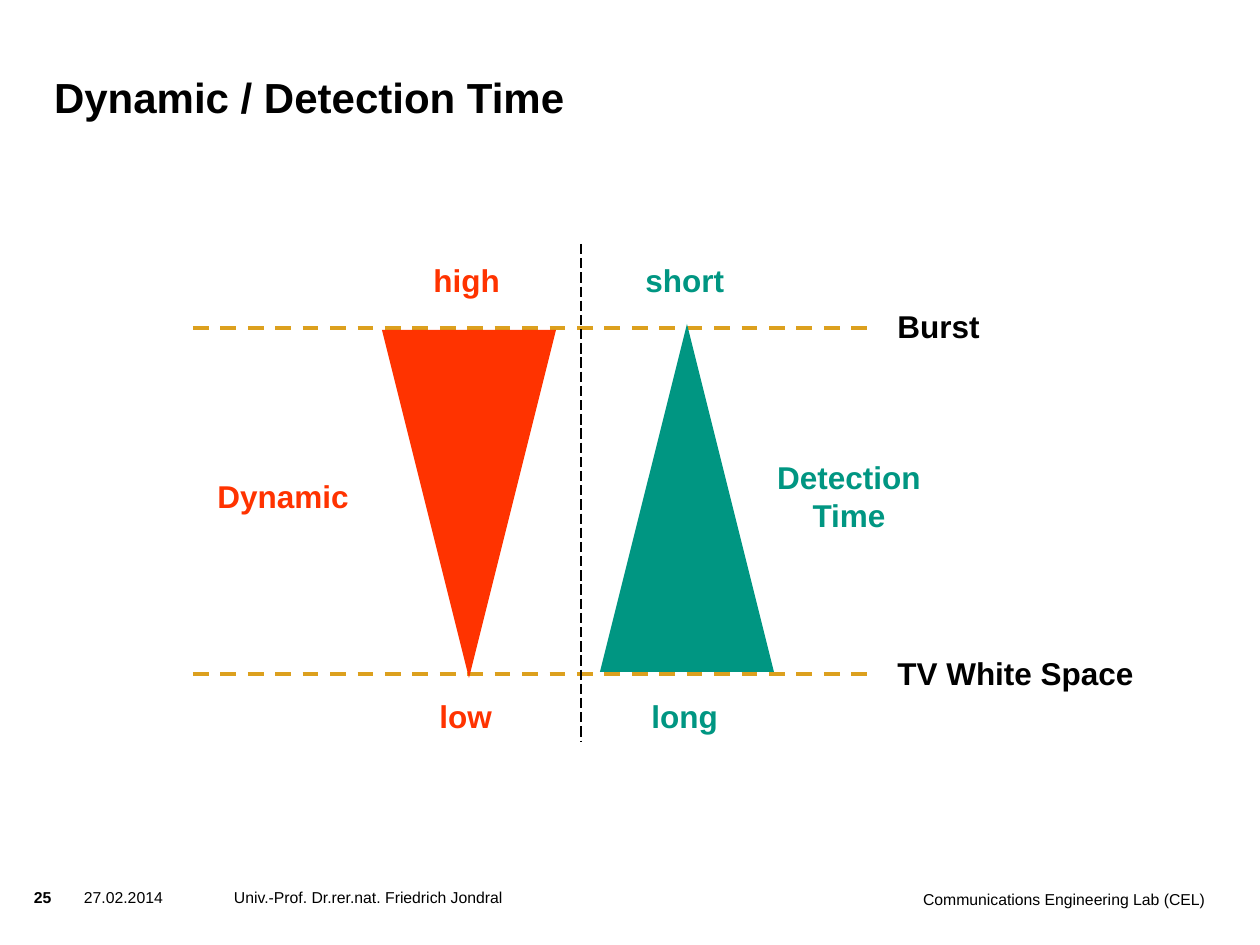
import pptx
import pptx.util
import pptx.dml.color
import pptx.enum.dml
import pptx.enum.shapes
import pptx.enum.text
import pptx.oxml.ns
import lxml.etree

PX = 914400 // 126
RED, GREEN, GOLD, BLACK = "FF3300", "009682", "DCA01E", "000000"
ALIGN = pptx.enum.text.PP_ALIGN
DASH = pptx.enum.dml.MSO_LINE

TITLE = ("Dynamic / Detection Time", (54, 45, 953, 77))
LABELS = [
    ("Dynamic", (205, 471, 156, 50), RED),
    ("Detection\nTime", (764, 452, 170, 89), GREEN),
    ("Burst", (885, 301, 107, 50), BLACK),
    ("TV White Space", (885, 648, 262, 50), BLACK),
    ("high", (421, 255, 92, 50), RED),
    ("short", (633, 255, 105, 50), GREEN),
    ("low", (427, 691, 78, 50), RED),
    ("long", (639, 691, 92, 50), GREEN),
]
FOOTERS = [
    ("25", (34, 888, 45, 30), True, ALIGN.LEFT),
    ("27.02.2014", (84, 888, 118, 49), False, ALIGN.LEFT),
    ("Univ.-Prof. Dr.rer.nat. Friedrich Jondral", (234, 888, 586, 49), False, ALIGN.LEFT),
    ("Communications Engineering Lab (CEL)", (828, 890, 377, 49), False, ALIGN.RIGHT),
]
LEVELS = [
    ((193, 328, 873, 328), GOLD, 2.25, DASH.DASH),
    ((193, 674, 873, 674), GOLD, 2.25, DASH.DASH),
]
DIVIDER = ((581, 244, 581, 741), BLACK, 0.75, DASH.LONG_DASH)
TRIANGLES = [
    ((600, 324, 174, 348), GREEN, 0),
    ((382, 330, 174, 348), RED, 180),
]


def emu(lengths):
    return [length * PX for length in lengths]


def color(value):
    return pptx.dml.color.RGBColor.from_string(value)


def write(box, text, size=18, fill=BLACK, bold=True, align=ALIGN.LEFT, inset=True,
          wrap=False, anchor=pptx.enum.text.MSO_ANCHOR.TOP):
    frame = box.text_frame
    frame.text = text
    frame.word_wrap = wrap
    frame.auto_size = pptx.enum.text.MSO_AUTO_SIZE.NONE
    frame.vertical_anchor = anchor
    if not inset:
        frame.margin_left = frame.margin_right = frame.margin_top = frame.margin_bottom = 0
    for para in frame.paragraphs:
        para.alignment = align
        for span in para.runs:
            span.font.name = "Arial"
            span.font.size = pptx.util.Pt(size)
            span.font.bold = bold
            span.font.color.rgb = color(fill)


def draw_line(page, ends, stroke, width, dash):
    line = page.shapes.add_connector(pptx.enum.shapes.MSO_CONNECTOR.STRAIGHT, *emu(ends))
    line.line.color.rgb = color(stroke)
    line.line.width = pptx.util.Pt(width)
    line.line.dash_style = dash
    lxml.etree.SubElement(line._element.spPr, pptx.oxml.ns.qn("a:effectLst"))


def draw_triangle(page, place, fill, turn):
    triangle = page.shapes.add_shape(
        pptx.enum.shapes.MSO_SHAPE.ISOSCELES_TRIANGLE, *emu(place))
    triangle.shadow.inherit = False
    triangle.fill.solid()
    triangle.fill.fore_color.rgb = color(fill)
    triangle.line.fill.background()
    triangle.rotation = turn


def main():
    deck = pptx.Presentation()
    deck.slide_width, deck.slide_height = emu((1260, 945))
    page = deck.slides.add_slide(deck.slide_layouts[5])

    text, place = TITLE
    title = page.shapes.title
    title.left, title.top, title.width, title.height = emu(place)
    write(title, text, size=24, inset=False, wrap=True,
          anchor=pptx.enum.text.MSO_ANCHOR.BOTTOM)

    for level in LEVELS:
        draw_line(page, *level)
    for text, place, fill in LABELS:
        align = ALIGN.CENTER if "\n" in text else ALIGN.LEFT
        write(page.shapes.add_textbox(*emu(place)), text, fill=fill, align=align)
    for triangle in TRIANGLES:
        draw_triangle(page, *triangle)
    draw_line(page, *DIVIDER)
    for text, place, bold, align in FOOTERS:
        write(page.shapes.add_textbox(*emu(place)), text, size=9, bold=bold,
              align=align, inset=False, wrap=True)

    deck.save("out.pptx")


if __name__ == "__main__":
    main()
